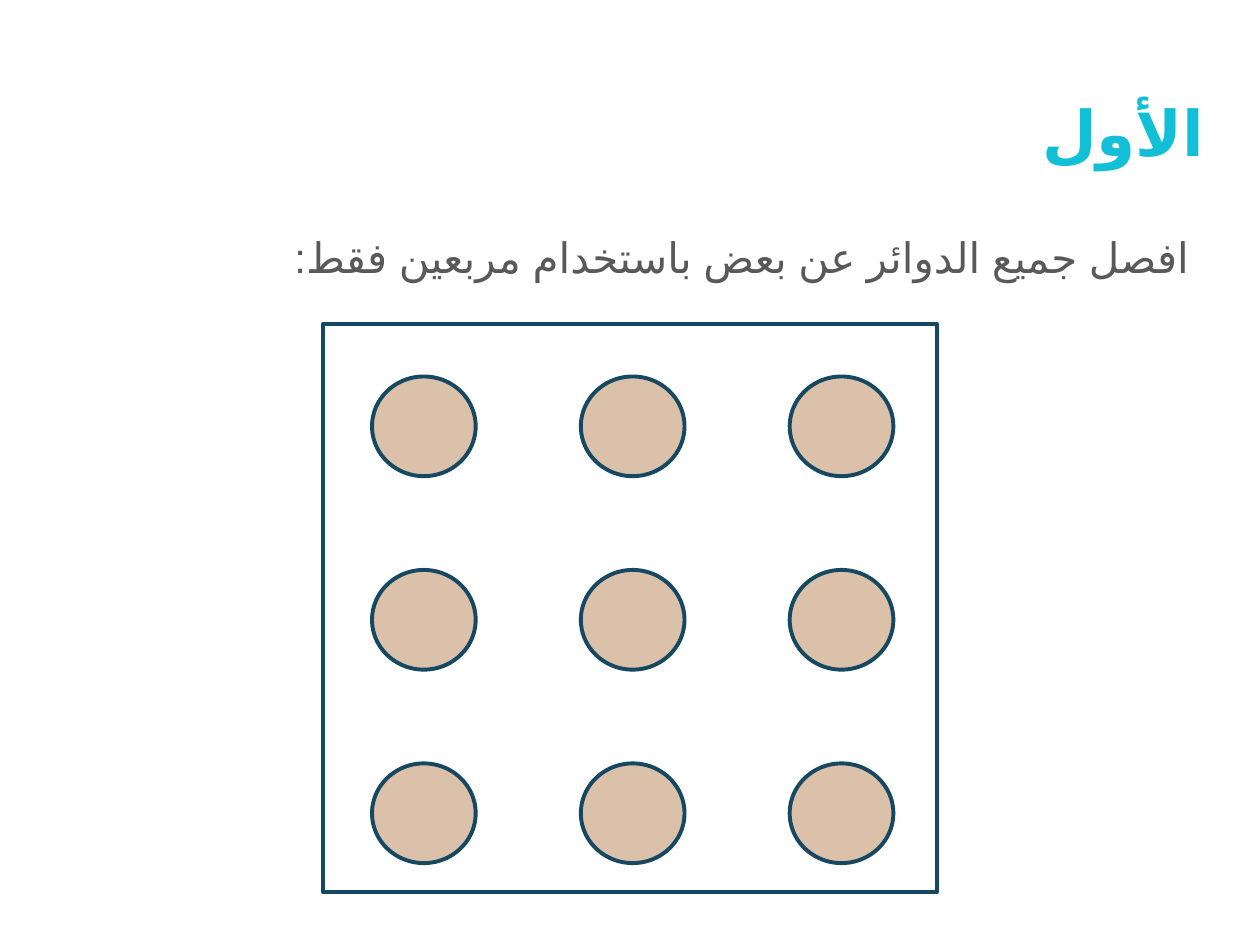
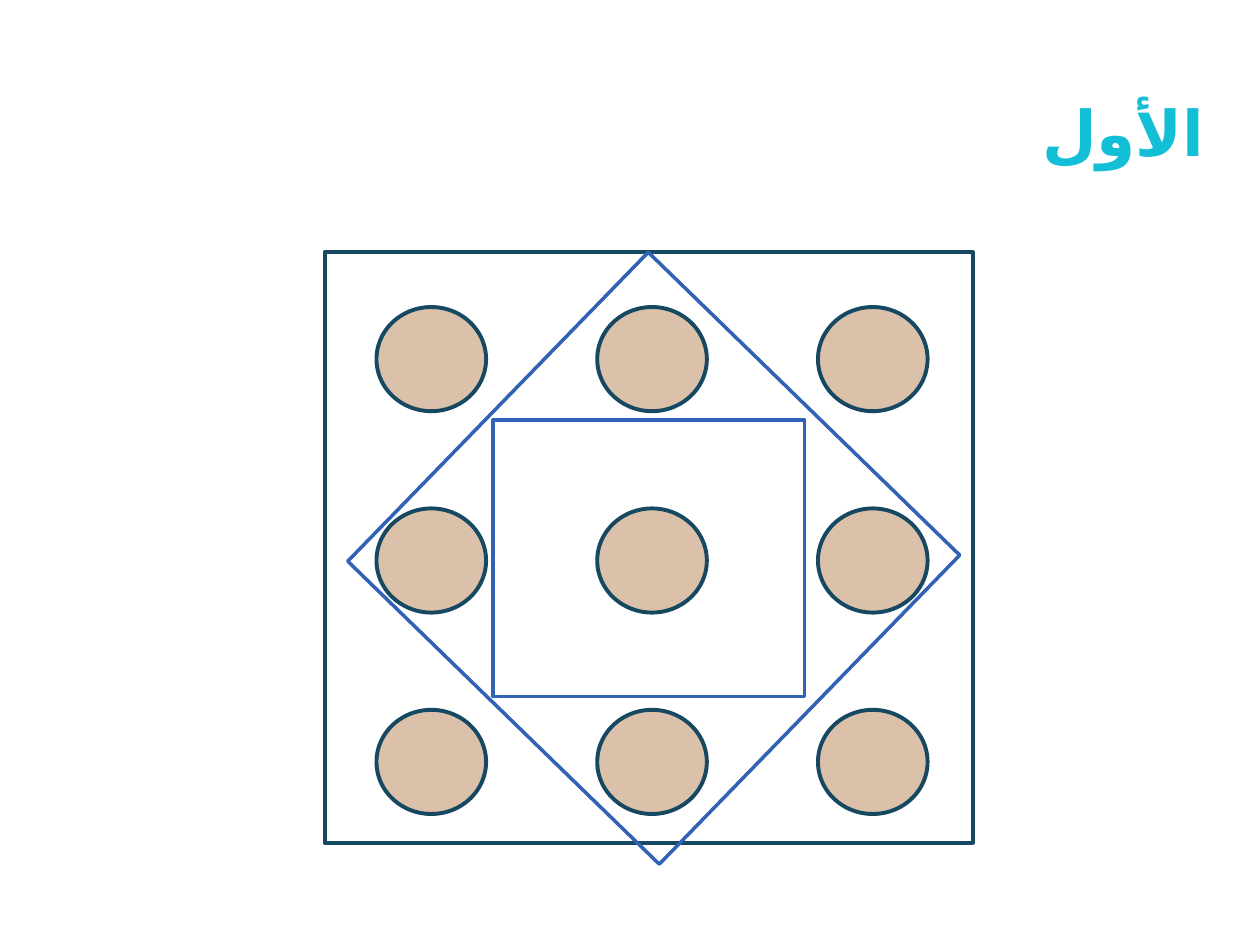
from itertools import product
from typing import NamedTuple

from lxml import etree
from pptx import Presentation
from pptx import util as u
from pptx.dml.color import RGBColor
from pptx.enum import lang, shapes, text
from pptx.oxml import ns

CYAN = RGBColor(0x13, 0xBF, 0xD6)
GREY = RGBColor(0x59, 0x59, 0x59)
SAND = RGBColor(0xDB, 0xC1, 0xAA)
NAVY = RGBColor(0x16, 0x48, 0x61)
BLUE = RGBColor(0x31, 0x62, 0xB5)

TITLE = "الأول"
TASK = "افصل جميع الدوائر عن بعض باستخدام مربعين فقط:"
TITLE_AND_BODY, TITLE_ONLY = 1, 5


class Area(NamedTuple):
    left: float
    top: float
    width: float
    height: float

    def lengths(self) -> list[u.Cm]:
        return [u.Cm(value) for value in self]


class Puzzle(NamedTuple):
    frame: Area
    first_circle: Area
    step_x: float
    step_y: float


class Square(NamedTuple):
    area: Area
    rotation: float = 0


TITLE_AREA = Area(0.86, 1.63, 23.67, 2.11)
BODY_AREA = Area(0.86, 4.27, 23.67, 12.65)
QUESTION = Puzzle(Area(6.51, 6.53, 12.38, 11.46), Area(7.5, 7.59, 2.09, 2.01), 4.21, 3.9)
ANSWER = Puzzle(Area(6.55, 5.08, 13.06, 11.91), Area(7.59, 6.19, 2.21, 2.1), 4.45, 4.06)
SEPARATORS = [
    Square(Area(8.8, 6.91, 8.76, 8.69), 44.2),
    Square(Area(9.94, 8.47, 6.28, 5.57)),
]


def fill_placeholder(box, area: Area, words: str, font_name: str, size: float,
                     color: RGBColor, bold: bool, anchor, indent: float = 0) -> None:
    box.left, box.top, box.width, box.height = area.lengths()
    frame = box.text_frame
    frame.text = words
    frame.word_wrap = True
    frame.auto_size = text.MSO_AUTO_SIZE.NONE
    frame.vertical_anchor = anchor
    frame.margin_left = frame.margin_right = u.Cm(0.25)
    frame.margin_top = frame.margin_bottom = u.Cm(0.25)
    para = frame.paragraphs[0]
    para.alignment = text.PP_ALIGN.RIGHT
    para.space_before = u.Pt(0)
    properties = para._p.get_or_add_pPr()
    properties.set("rtl", "1")
    properties.set("marL", str(u.Cm(indent)))
    properties.set("indent", "0")
    etree.SubElement(properties, ns.qn("a:buNone"))
    font = para.font
    font.name, font.size, font.bold = font_name, u.Pt(size), bold
    font.color.rgb = color
    for script in ("a:ea", "a:cs"):
        typeface = etree.SubElement(properties.find(ns.qn("a:defRPr")), ns.qn(script))
        typeface.set("typeface", font_name)
    para.runs[0].font.language_id = lang.MSO_LANGUAGE_ID.ARABIC


def add_page(deck, layout: int):
    page = deck.slides.add_slide(deck.slide_layouts[layout])
    fill_placeholder(page.shapes.title, TITLE_AREA, TITLE, "Roboto", 36, CYAN,
                     True, text.MSO_ANCHOR.TOP)
    return page


def add_outline(holder, kind, area: Area, color: RGBColor, weight: float):
    shape = holder.add_shape(kind, *area.lengths())
    shape.shadow.inherit = False
    shape.fill.background()
    shape.line.color.rgb = color
    shape.line.width = u.Pt(weight)
    return shape


def add_puzzle(page, puzzle: Puzzle) -> None:
    group = page.shapes.add_group_shape().shapes
    first = puzzle.first_circle
    for row, column in product(range(3), repeat=2):
        area = first._replace(left=first.left + column * puzzle.step_x,
                              top=first.top + row * puzzle.step_y)
        circle = add_outline(group, shapes.MSO_SHAPE.OVAL, area, NAVY, 2.25)
        circle.fill.solid()
        circle.fill.fore_color.rgb = SAND
    add_outline(group, shapes.MSO_SHAPE.RECTANGLE, puzzle.frame, NAVY, 2.25)


def add_question(deck) -> None:
    page = add_page(deck, TITLE_AND_BODY)
    body = page.placeholders[1]
    fill_placeholder(body, BODY_AREA, TASK, "Arial", 24, GREY,
                     False, text.MSO_ANCHOR.TOP, 0.3)
    body.text_frame.paragraphs[0].line_spacing = 1.15
    add_puzzle(page, QUESTION)


def add_answer(deck) -> None:
    page = add_page(deck, TITLE_ONLY)
    add_puzzle(page, ANSWER)
    for square in SEPARATORS:
        outline = add_outline(page.shapes, shapes.MSO_SHAPE.RECTANGLE, square.area, BLUE, 2)
        outline.rotation = square.rotation


def main() -> None:
    deck = Presentation()
    deck.slide_width, deck.slide_height = u.Cm(25.4), u.Cm(19.05)
    add_question(deck)
    add_answer(deck)
    deck.save("out.pptx")


if __name__ == "__main__":
    main()
